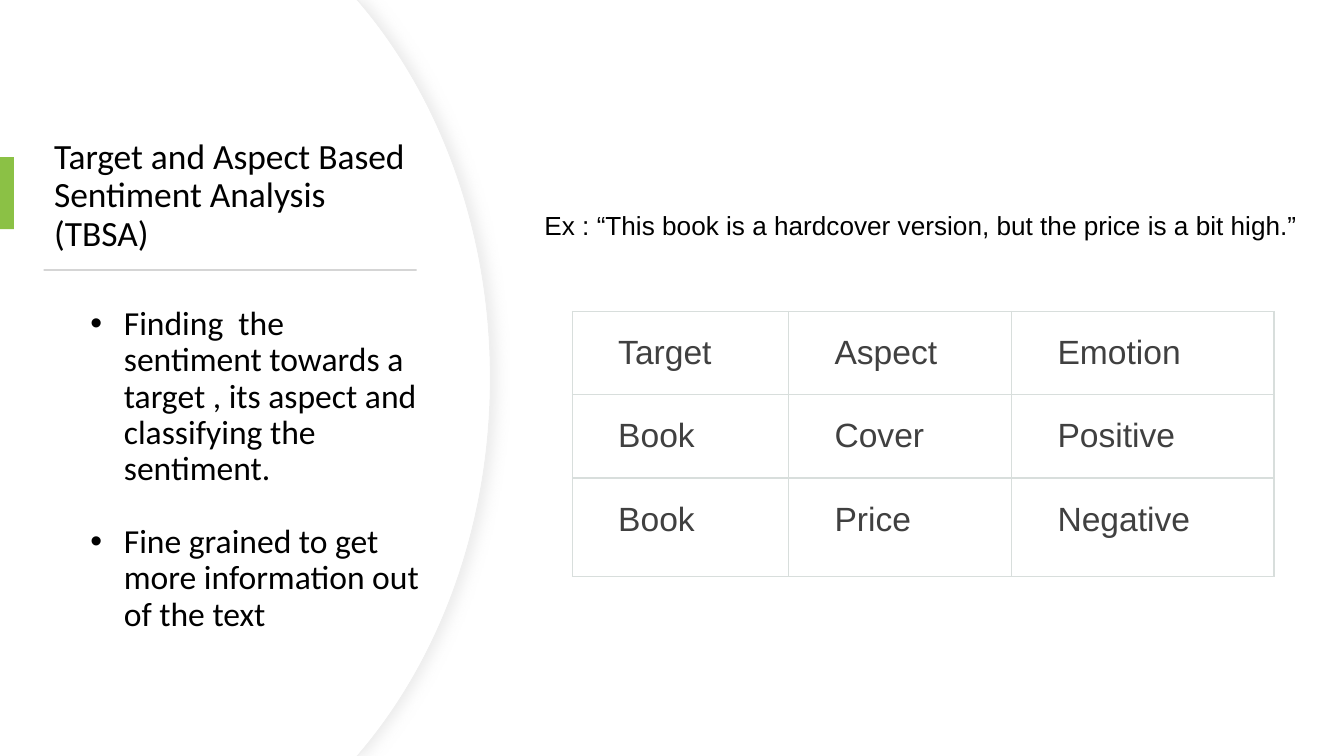
"""Build a slide on target and aspect based sentiment analysis."""
from dataclasses import dataclass

import pptx
import pptx.dml.color
import pptx.enum.shapes
import pptx.enum.text
import pptx.oxml
import pptx.oxml.ns
import pptx.util

Pt = pptx.util.Pt
RGBColor = pptx.dml.color.RGBColor
qn = pptx.oxml.ns.qn

WHITE = RGBColor(0xFF, 0xFF, 0xFF)
BLACK = RGBColor(0x00, 0x00, 0x00)
OUTLINE = RGBColor(0xEF, 0xEF, 0xEF)
SHADOW = RGBColor(0xD9, 0xD9, 0xD9)
GREEN = RGBColor(0x8B, 0xC1, 0x45)
RULE = RGBColor(0xD5, 0xD5, 0xD5)
CELL_TEXT = RGBColor(0x40, 0x40, 0x40)
BORDER = RGBColor(0xD8, 0xDE, 0xDC)

WIDTH, HEIGHT = 720, 405
UNITS_PER_POINT = 100
NAMESPACE = pptx.oxml.ns.nsdecls("a")

TITLE = "Target and Aspect Based Sentiment Analysis (TBSA)"
POINTS = [
    "Finding  the sentiment towards a target , its aspect and classifying the sentiment.",
    "Fine grained to get more information out of the text",
]
EXAMPLE = "Ex : “This book is a hardcover version, but the price is a bit high.”"
ROWS = [
    ("Target", "Aspect", "Emotion"),
    ("Book", "Cover", "Positive"),
    ("Book", "Price", "Negative"),
]
COLUMN_WIDTHS = (115.9, 119.5, 140.4)
ROW_HEIGHTS = (34.6, 34.6, 52.8)


@dataclass(frozen=True)
class Box:
    left: float
    top: float
    width: float
    height: float

    def lengths(self) -> tuple:
        return Pt(self.left), Pt(self.top), Pt(self.width), Pt(self.height)


def add_panel(slide, inset: float):
    curve = [(191.5, 0), (195.1, 4.3), (236.9, 54.7), (262.8, 125.3)]
    upper = [(x - inset, y) for x, y in curve]
    lower = [(x, HEIGHT - y) for x, y in reversed(upper)]
    outline = [*upper, (262.8 - inset, HEIGHT / 2), *lower, (0, HEIGHT)]
    builder = slide.shapes.build_freeform(0, 0, scale=Pt(1) / UNITS_PER_POINT)
    builder.add_line_segments(
        [(x * UNITS_PER_POINT, y * UNITS_PER_POINT) for x, y in outline], close=True)
    panel = builder.convert_to_shape()
    lines = list(panel.element.iter(qn("a:lnTo")))
    for first in (2, 5):
        curve_element = pptx.oxml.parse_xml(f"<a:cubicBezTo {NAMESPACE}/>")
        lines[first].addprevious(curve_element)
        for line in lines[first:first + 3]:
            curve_element.append(line[0])
            line.getparent().remove(line)
    panel.shadow.inherit = False
    panel.fill.solid()
    panel.fill.fore_color.rgb = WHITE
    panel.line.fill.background()
    return panel


def add_panel_edge(panel) -> None:
    panel.line.color.rgb = OUTLINE
    panel.line.width = Pt(0.75)
    effects = panel.element.spPr.find(qn("a:effectLst"))
    effects.append(pptx.oxml.parse_xml(
        f'<a:outerShdw {NAMESPACE} blurRad="{Pt(7)}" dist="{Pt(3)}" dir="0" '
        f'algn="l" rotWithShape="0"><a:srgbClr val="{SHADOW}">'
        '<a:alpha val="50000"/></a:srgbClr></a:outerShdw>'
    ))


def add_bar(slide, box: Box, color: RGBColor) -> None:
    bar = slide.shapes.add_shape(
        pptx.enum.shapes.MSO_SHAPE.RECTANGLE, *box.lengths())
    bar.shadow.inherit = False
    bar.fill.solid()
    bar.fill.fore_color.rgb = color
    bar.line.fill.background()


def set_font(paragraph, name: str, size: float, color: RGBColor) -> None:
    paragraph.font.name = name
    paragraph.font.size = Pt(size)
    paragraph.font.color.rgb = color


def place_title(slide, box: Box) -> None:
    title = slide.shapes.title
    title.left, title.top, title.width, title.height = box.lengths()
    frame = title.text_frame
    frame.text = TITLE
    frame.word_wrap = True
    frame.auto_size = pptx.enum.text.MSO_AUTO_SIZE.NONE
    frame.vertical_anchor = pptx.enum.text.MSO_ANCHOR.MIDDLE
    paragraph = frame.paragraphs[0]
    paragraph.alignment = pptx.enum.text.PP_ALIGN.LEFT
    paragraph.line_spacing = 0.9
    set_font(paragraph, "Calibri", 19, BLACK)
    slide.shapes.element.append(title.element)


def add_bullets(slide, box: Box) -> None:
    frame = slide.shapes.add_textbox(*box.lengths()).text_frame
    frame.word_wrap = True
    frame.text = "\n".join(POINTS)
    for paragraph in frame.paragraphs:
        set_font(paragraph, "Calibri", 18, BLACK)
        properties = paragraph._p.get_or_add_pPr()
        properties.set("marL", str(Pt(36)))
        properties.set("indent", str(Pt(-18)))
        for bullet in ('buFont {} typeface="Arial"', 'buChar {} char="•"'):
            markup = f"<a:{bullet.format(NAMESPACE)}/>"
            properties.insert_element_before(
                pptx.oxml.parse_xml(markup), "a:tabLst", "a:defRPr", "a:extLst")
        paragraph.line_spacing = 0.9
    frame.paragraphs[1].space_before = Pt(19.7)


def add_example(slide, box: Box) -> None:
    frame = slide.shapes.add_textbox(*box.lengths()).text_frame
    frame.word_wrap = True
    frame.auto_size = pptx.enum.text.MSO_AUTO_SIZE.SHAPE_TO_FIT_TEXT
    frame.text = EXAMPLE
    set_font(frame.paragraphs[0], "Arial", 14, BLACK)


def format_cell(cell, text: str) -> None:
    cell.text = text
    cell.margin_left = Pt(24.5)
    cell.margin_top = cell.margin_right = Pt(12.2)
    cell.margin_bottom = Pt(10.8)
    set_font(cell.text_frame.paragraphs[0], "Arial", 18, CELL_TEXT)
    properties = cell._tc.get_or_add_tcPr()
    for side in "LRTB":
        properties.append(pptx.oxml.parse_xml(
            f'<a:ln{side} {NAMESPACE} w="{Pt(0.75)}"><a:solidFill>'
            f'<a:srgbClr val="{BORDER}"/></a:solidFill></a:ln{side}>'
        ))
    cell.fill.background()


def add_emotion_table(slide, left: float, top: float) -> None:
    box = Box(left, top, sum(COLUMN_WIDTHS), sum(ROW_HEIGHTS))
    table = slide.shapes.add_table(
        len(ROW_HEIGHTS), len(COLUMN_WIDTHS), *box.lengths()).table
    table.first_row = table.horz_banding = False
    for column, width in zip(table.columns, COLUMN_WIDTHS):
        column.width = Pt(width)
    for row, height, texts in zip(table.rows, ROW_HEIGHTS, ROWS):
        row.height = Pt(height)
        for cell, text in zip(row.cells, texts):
            format_cell(cell, text)


def main() -> None:
    presentation = pptx.Presentation()
    presentation.slide_width, presentation.slide_height = Pt(WIDTH), Pt(HEIGHT)
    slide = presentation.slides.add_slide(presentation.slide_layouts[5])
    add_panel_edge(add_panel(slide, 0))
    add_panel(slide, 0.5)
    place_title(slide, Box(21.8, 68.6, 203, 73.4))
    add_bar(slide, Box(0, 84.2, 7.5, 38.6), GREEN)
    add_bar(slide, Box(23.4, 144.1, 199.8, 1), RULE)
    add_bullets(slide, Box(23.3, 160.6, 213.1, 189.4))
    add_emotion_table(slide, 306.7, 166.8)
    add_example(slide, Box(284.6, 108.7, 445, 41))
    presentation.save("out.pptx")


if __name__ == "__main__":
    main()
